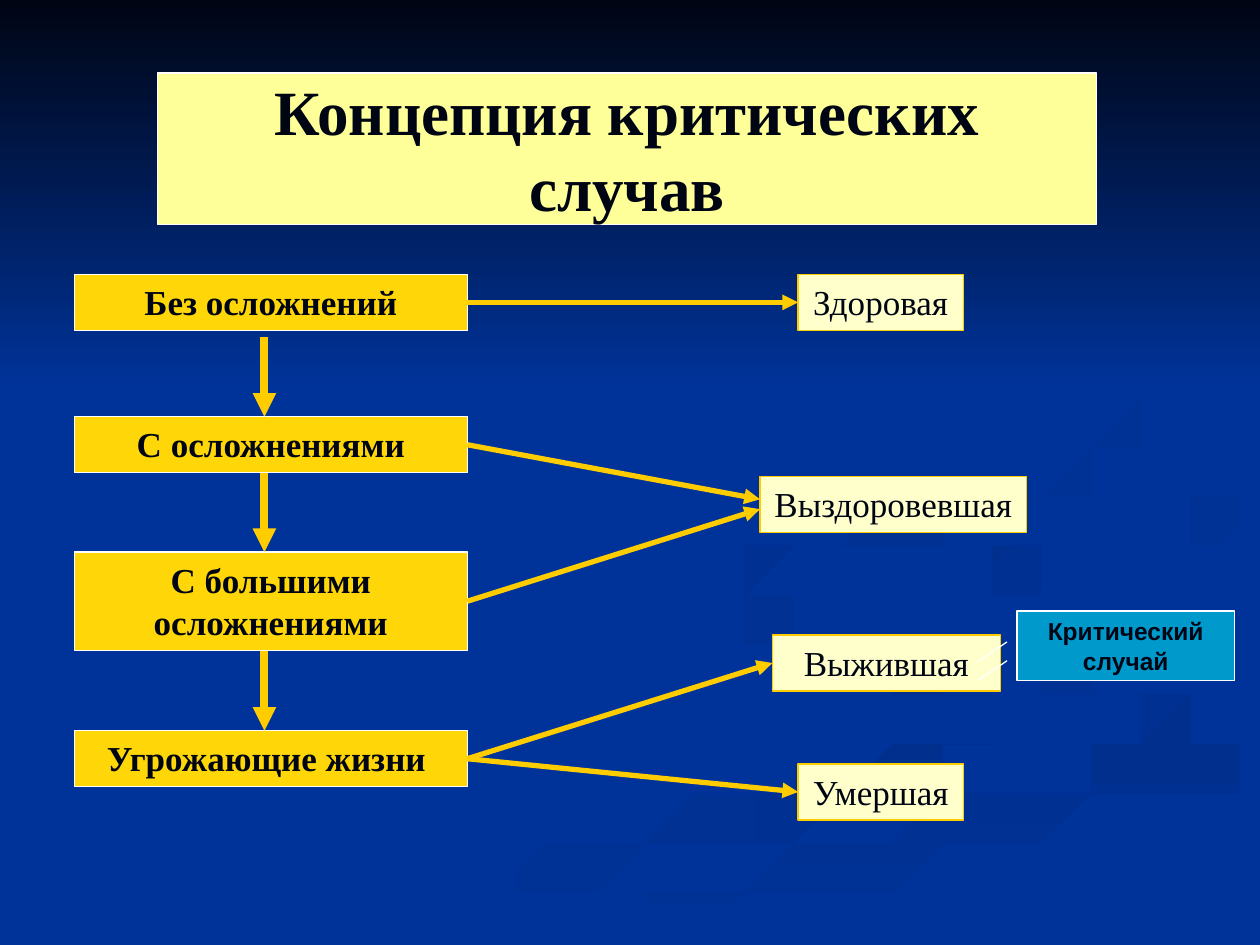
from lxml.etree import SubElement
from pptx import Presentation
from pptx.dml.color import RGBColor
from pptx.enum.shapes import MSO_CONNECTOR, MSO_SHAPE
from pptx.enum.text import MSO_ANCHOR, MSO_AUTO_SIZE, PP_ALIGN
from pptx.oxml.ns import qn
from pptx.util import Cm, Pt

NAVY, BLUE, WHITE = "000514", "003399", "FFFFFF"
GOLD, AMBER, CREAM, SHADE = "FFCC00", "FFD607", "FFFFCC", "002F8E"

STAGE_LEFT, STAGE_WIDTH, ROW_HEIGHT = 1.5, 7.92, 1.13
STAGES = [
    ("Без осложнений", 5.53, ROW_HEIGHT),
    ("С осложнениями", 8.4, ROW_HEIGHT),
    ("С большими осложнениями", 11.13, 1.98),
    ("Угрожающие жизни ", 14.73, ROW_HEIGHT),
]
OUTCOMES = [
    ("Здоровая", 16.09, 5.53, 3.33),
    ("Выздоровевшая", 15.32, 9.6, 5.38),
    ("Выжившая", 15.57, 12.8, 4.6),
    ("Умершая", 16.09, 15.4, 3.33),
]
LINKS = [(0, 0, 0), (1, 1, -0.1), (2, 1, 0.1), (3, 3, 0), (3, 2, 0)]

WAVES = [
    ((BLUE, SHADE), 0, (0.1, 0.4),
     [14.5 + 11.7j, 16 + 12.8j, 19.1 + 13.7j, 20 + 14.7j, 17.5 + 15.8j, 12.7 + 17.1j, 8.5 + 18.7j]),
    ((BLUE, SHADE), 45, (0.1, 0.25),
     [18.4 + 11.8j, 18.9 + 12.5j, 20.6 + 13.2j, 22.7 + 13.8j, 23.6 + 14.6j, 22.8 + 15.3j]),
    ((SHADE, BLUE), 90, (0.3, 0.35),
     [13.5 + 18.7j, 17 + 17.5j, 21.9 + 16j, 25.2 + 15.1j]),
    ((SHADE, BLUE), 45, (0.1, 0.23),
     [20.7 + 12.4j, 20.2 + 11.8j, 21.3 + 11.1j, 23.7 + 10.7j, 25.3 + 10.4j]),
    ((SHADE, BLUE), 45, (0.05, 0.2),
     [19.5 + 6j, 21.3 + 7j, 22.6 + 8.4j, 21.4 + 9.8j, 17.3 + 10.7j, 14.9 + 11.7j, 15.7 + 12.6j]),
]


def color(value):
    return RGBColor.from_string(value)


def paint(shape, fill, line):
    shape.fill.solid()
    shape.fill.fore_color.rgb = color(fill)
    shape.line.color.rgb = color(line)
    shape.line.width = Pt(0.75)


def paint_gradient(shape, colors, angle):
    shape.shadow.inherit = False
    shape.line.fill.background()
    shape.fill.gradient()
    shape.fill.gradient_angle = (360 - angle) % 360
    for position, (stop, value) in enumerate(zip(shape.fill.gradient_stops, colors)):
        stop.color.rgb = color(value)
        stop.position = position


def write(shape, text, size=20, font="Times New Roman", bold=False,
          anchor=MSO_ANCHOR.TOP, wrap=True):
    frame = shape.text_frame
    frame.text = text
    frame.word_wrap = wrap
    frame.auto_size = MSO_AUTO_SIZE.NONE
    frame.vertical_anchor = anchor
    for paragraph in frame.paragraphs:
        paragraph.alignment = PP_ALIGN.CENTER
        for run in paragraph.runs:
            run.font.size = Pt(size)
            run.font.name = font
            run.font.bold = bold
            run.font.color.rgb = color(NAVY)


def smooth_curve(knots, steps=6):
    padded = [knots[0], *knots, knots[-1]]
    curve = []
    for a, b, c, d in zip(padded, padded[1:], padded[2:], padded[3:]):
        for step in range(steps):
            t = step / steps
            curve.append(b + t * (c - a) / 2 + t**2 * (a - 2.5 * b + 2 * c - d / 2)
                         + t**3 * (3 * b - 3 * c + d - a) / 2)
    return curve + [knots[-1]]


def add_wave(slide, colors, angle, half_widths, knots):
    curve = smooth_curve(knots)
    last = len(curve) - 1
    start, end = half_widths
    upper, lower = [], []
    for index, point in enumerate(curve):
        tangent = curve[min(index + 1, last)] - curve[max(index - 1, 0)]
        offset = 1j * tangent / abs(tangent) * (start + (end - start) * index / last)
        upper.append(point + offset)
        lower.append(point - offset)
    outline = [(point.real, point.imag) for point in upper + lower[::-1]]
    builder = slide.shapes.build_freeform(*outline[0], scale=Cm(1))
    builder.add_line_segments(outline[1:], close=True)
    paint_gradient(builder.convert_to_shape(), colors, angle)


def add_backdrop(slide, width):
    slide.background.fill.solid()
    slide.background.fill.fore_color.rgb = color(BLUE)
    for wave in WAVES:
        add_wave(slide, *wave)
    sky = slide.shapes.add_shape(MSO_SHAPE.RECTANGLE, 0, 0, width, Cm(7.82))
    paint_gradient(sky, (NAVY, BLUE), 90)


def add_title(slide, text):
    title = slide.shapes.title
    title.left, title.top, title.width, title.height = map(Cm, (3.18, 1.47, 18.92, 3.05))
    paint(title, "FFFF99", WHITE)
    write(title, text, size=36, bold=True, anchor=MSO_ANCHOR.MIDDLE)
    title.element.getparent().append(title.element)


def add_box(slide, text, left, top, width, height, fill, line, **text_format):
    box = slide.shapes.add_shape(MSO_SHAPE.RECTANGLE, *map(Cm, (left, top, width, height)))
    box.shadow.inherit = False
    paint(box, fill, line)
    write(box, text, **text_format)


def add_line(slide, start, end, stroke, width, arrow=False):
    connector = slide.shapes.add_connector(MSO_CONNECTOR.STRAIGHT, *map(Cm, start + end))
    connector.line.color.rgb = color(stroke)
    connector.line.width = Pt(width)
    properties = connector.element.spPr
    if arrow:
        SubElement(properties.find(qn("a:ln")), qn("a:tailEnd"), type="triangle")
    SubElement(properties, qn("a:effectLst"))


def add_scheme(slide):
    for text, top, height in STAGES:
        add_box(slide, text, STAGE_LEFT, top, STAGE_WIDTH, height, AMBER, WHITE, bold=True)
    for text, left, top, width in OUTCOMES:
        add_box(slide, text, left, top, width, ROW_HEIGHT, CREAM, GOLD)
    for text, top, height in STAGES[1:]:
        add_line(slide, (5.33, top - 1.6), (5.33, top), GOLD, 4.5, arrow=True)
    for stage, outcome, shift in LINKS:
        text, stage_top, height = STAGES[stage]
        text, left, outcome_top, width = OUTCOMES[outcome]
        start = (STAGE_LEFT + STAGE_WIDTH, stage_top + height / 2)
        end = (left, outcome_top + ROW_HEIGHT / 2 + shift)
        add_line(slide, start, end, GOLD, 3, arrow=True)


def add_critical_case(slide):
    add_box(slide, "Критический\nслучай", 20.5, 12.32, 4.39, 1.4, "0099CC", WHITE,
            size=14, font="Arial", bold=True, anchor=MSO_ANCHOR.MIDDLE, wrap=False)
    for bottom in (13.34, 13.72):
        add_line(slide, (19.71, bottom), (20.3, bottom - 0.4), WHITE, 0.75)


def main():
    presentation = Presentation()
    presentation.slide_width, presentation.slide_height = Cm(25.4), Cm(19.05)
    slide = presentation.slides.add_slide(presentation.slide_layouts[5])
    add_backdrop(slide, presentation.slide_width)
    add_title(slide, "Концепция критических случав")
    add_scheme(slide)
    add_critical_case(slide)
    presentation.save("out.pptx")


if __name__ == "__main__":
    main()
